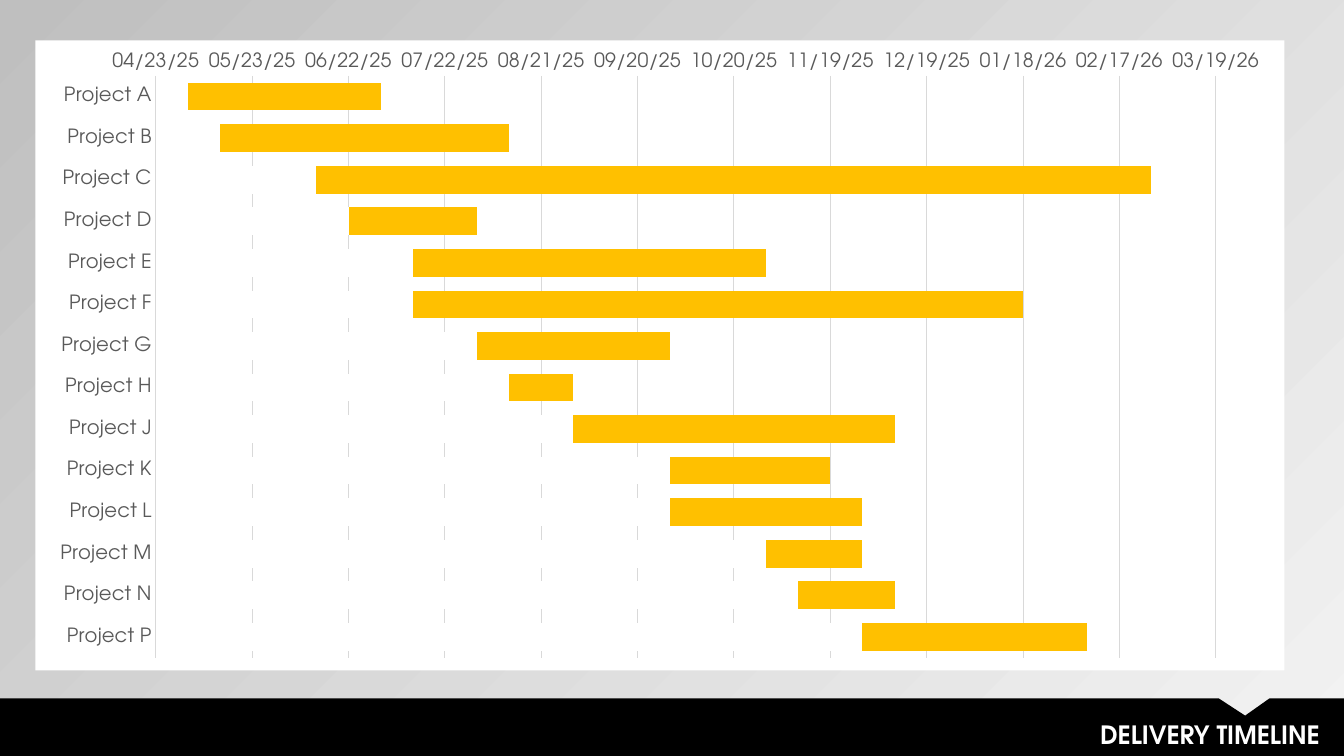
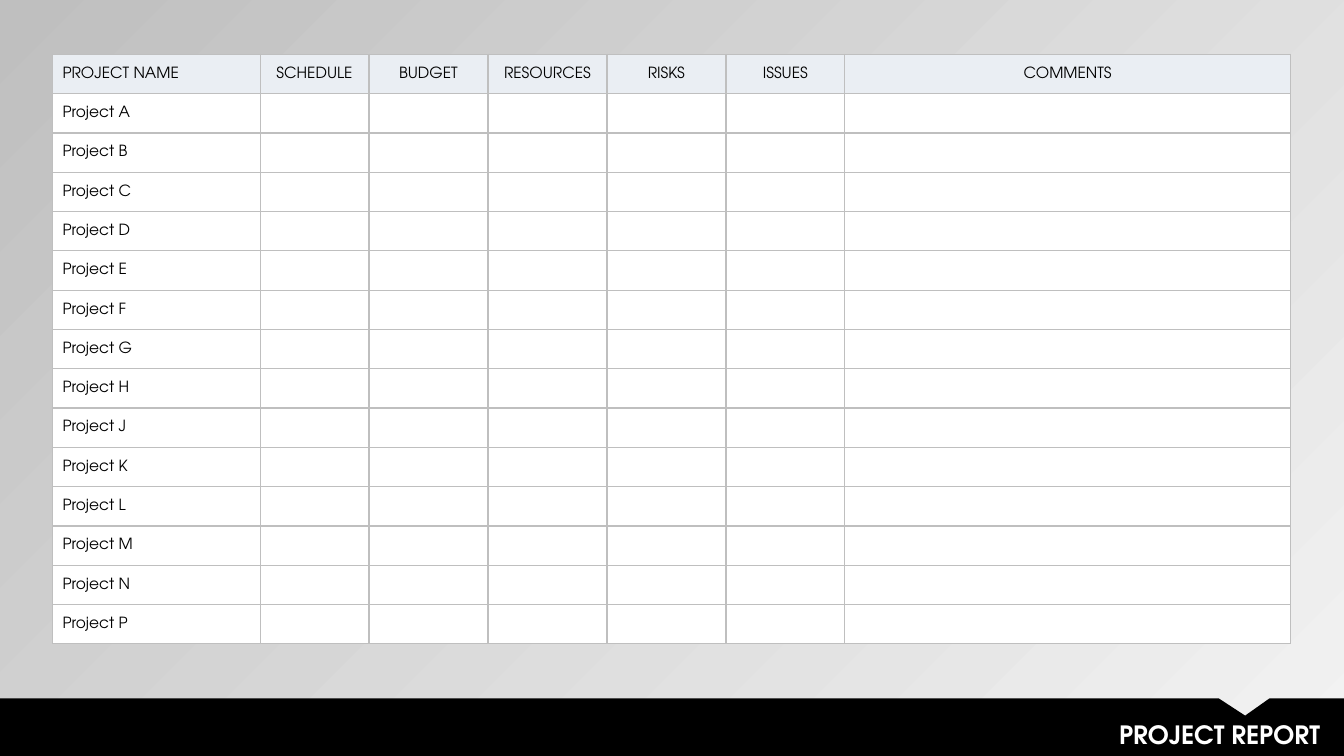
import pptx
import pptx.chart.data
import pptx.dml.color
import pptx.enum.chart
import pptx.enum.text
import pptx.oxml
import pptx.oxml.ns
import pptx.util

Inches = pptx.util.Inches
Pt = pptx.util.Pt
RGBColor = pptx.dml.color.RGBColor
PP_ALIGN = pptx.enum.text.PP_ALIGN
qn = pptx.oxml.ns.qn

# Shared style
FONT = "TeX Gyre Adventor"
BLACK = RGBColor(0x00, 0x00, 0x00)
WHITE = RGBColor(0xFF, 0xFF, 0xFF)
BG_LIGHT = RGBColor(0xF2, 0xF2, 0xF2)
BG_DARK = RGBColor(0xBF, 0xBF, 0xBF)
AMBER = RGBColor(0xFF, 0xC0, 0x00)
AXIS_TEXT = RGBColor(0x59, 0x59, 0x59)
GRID = RGBColor(0xD9, 0xD9, 0xD9)
HEADER = RGBColor(0xEA, 0xEE, 0xF3)
BORDER = RGBColor(0xBF, 0xBF, 0xBF)

BAND = [(0, 6.93), (12.09, 6.93), (12.35, 7.1), (12.59, 6.93),
        (13.33, 6.93), (13.33, 7.5), (0, 7.5)]

# Start and end of each project, as day serials
PROJECTS = {
    "Project A": (45780, 45840),
    "Project B": (45790, 45880),
    "Project C": (45820, 46080),
    "Project D": (45830, 45870),
    "Project E": (45850, 45960),
    "Project F": (45850, 46040),
    "Project G": (45870, 45930),
    "Project H": (45880, 45900),
    "Project J": (45900, 46000),
    "Project K": (45930, 45980),
    "Project L": (45930, 45990),
    "Project M": (45960, 45990),
    "Project N": (45970, 46000),
    "Project P": (45990, 46060),
}

# Report columns and their widths
COLUMNS = {"PROJECT NAME": 2.06, "SCHEDULE": 1.08, "BUDGET": 1.18,
           "RESOURCES": 1.18, "RISKS": 1.18, "ISSUES": 1.18, "COMMENTS": 4.42}
ROW_HEIGHT = 0.39


def xml(tag, body):
    """Element with the chart and drawing namespaces declared."""
    return pptx.oxml.parse_xml(
        f"<{tag} {pptx.oxml.ns.nsdecls('a', 'c')}>{body}</{tag}>")


class Deck:
    def __init__(self):
        self.prs = pptx.Presentation()
        self.prs.slide_width = Inches(13.33)
        self.prs.slide_height = Inches(7.5)
        self.s = None

    def style(self, font, size, color, bold=False):
        font.name = FONT
        font.size = Pt(size)
        font.color.rgb = color
        font.bold = bold

    def slide(self, title):
        self.s = self.prs.slides.add_slide(self.prs.slide_layouts[6])
        fill = self.s.background.fill
        fill.gradient()
        fill.gradient_angle = 135
        for stop, color in zip(fill.gradient_stops, (BG_LIGHT, BG_DARK)):
            stop.color.rgb = color
        self.band()
        self.title(title)

    def band(self):
        points = [(Inches(x), Inches(y)) for x, y in BAND]
        builder = self.s.shapes.build_freeform(*points[0])
        builder.add_line_segments(points[1:], close=True)
        sp = builder.convert_to_shape()
        sp.shadow.inherit = False
        sp.fill.solid()
        sp.fill.fore_color.rgb = BLACK
        sp.line.fill.background()

    def title(self, text):
        tf = self.s.shapes.add_textbox(
            Inches(4.13), Inches(7.09), Inches(9.06), Inches(0.4)).text_frame
        tf.word_wrap = True
        p = tf.paragraphs[0]
        p.text = text
        p.alignment = PP_ALIGN.RIGHT
        self.style(p.font, 18, WHITE, bold=True)

    def timeline(self, projects, first, last, step):
        # White start bars cover the end bars, leaving the duration visible
        starts, ends = zip(*projects.values())
        data = pptx.chart.data.CategoryChartData()
        data.categories = list(projects)
        data.add_series("Series 1", ends)
        data.add_series("Series 2", starts)
        chart = self.s.shapes.add_chart(
            pptx.enum.chart.XL_CHART_TYPE.BAR_CLUSTERED, Inches(0.35),
            Inches(0.4), Inches(12.39), Inches(6.25), data).chart
        chart.has_legend = False
        chart.has_title = False
        self.style(chart.font, 14, BLACK)

        plot = chart.plots[0]
        plot.gap_width = 50
        plot.overlap = 100
        plot.vary_by_categories = False
        for series, color in zip(plot.series, (AMBER, WHITE)):
            series.invert_if_negative = False
            series.format.fill.solid()
            series.format.fill.fore_color.rgb = color

        # Axes
        cat, val = chart.category_axis, chart.value_axis
        for axis in (cat, val):
            axis.major_tick_mark = pptx.enum.chart.XL_TICK_MARK.NONE
            axis.minor_tick_mark = pptx.enum.chart.XL_TICK_MARK.NONE
            self.style(axis.tick_labels.font, 14, AXIS_TEXT)
        cat.reverse_order = True
        val.minimum_scale, val.maximum_scale = first, last
        val.major_unit = step
        val.crosses = pptx.enum.chart.XL_AXIS_CROSSES.MINIMUM
        val.tick_labels.number_format = "mm/dd/yy;@"
        val.tick_labels.number_format_is_linked = False
        val.format.line.fill.background()
        for line in (cat.format.line, val.major_gridlines.format.line):
            line.color.rgb = GRID
            line.width = Pt(0.75)

        # Chart background and plot position
        root = chart._chartSpace
        root.find(qn("c:chart")).addnext(xml(
            "c:spPr", f'<a:solidFill><a:srgbClr val="{WHITE}"/></a:solidFill>'
                      "<a:ln><a:noFill/></a:ln>"))
        area = root.find(".//" + qn("c:plotArea"))
        for old in area.findall(qn("c:layout")):
            area.remove(old)
        modes = '<c:layoutTarget val="inner"/><c:xMode val="edge"/><c:yMode val="edge"/>'
        place = {"x": 0.0965, "y": 0.0565, "w": 0.8485, "h": 0.9235}
        sizes = "".join(f'<c:{k} val="{v}"/>' for k, v in place.items())
        area.insert(0, xml("c:layout", f"<c:manualLayout>{modes}{sizes}</c:manualLayout>"))

    def report(self, columns, names):
        rows = [list(columns)] + [[n] + [""] * (len(columns) - 1) for n in names]
        table = self.s.shapes.add_table(
            len(rows), len(columns), Inches(0.52), Inches(0.54),
            Inches(sum(columns.values())), Inches(ROW_HEIGHT * len(rows))).table
        table.horz_banding = False
        table.first_row = False
        for column, width in zip(table.columns, columns.values()):
            column.width = Inches(width)
        for i, row in enumerate(rows):
            table.rows[i].height = Inches(ROW_HEIGHT)
            for j, text in enumerate(row):
                align = PP_ALIGN.CENTER if j else PP_ALIGN.LEFT
                self.cell(table.cell(i, j), text, align, WHITE if i else HEADER)

    def cell(self, cell, text, align, color):
        cell.margin_top = cell.margin_bottom = 0
        cell.vertical_anchor = pptx.enum.text.MSO_ANCHOR.MIDDLE
        p = cell.text_frame.paragraphs[0]
        p.text = text
        p.alignment = align
        self.style(p.font, 11, BLACK)
        # Borders come before the fill
        pr = cell._tc.get_or_add_tcPr()
        for side in ("L", "R", "T", "B"):
            ln = xml(f"a:ln{side}",
                     f'<a:solidFill><a:srgbClr val="{BORDER}"/></a:solidFill>')
            ln.set("w", str(Pt(1)))
            pr.append(ln)
        cell.fill.solid()
        cell.fill.fore_color.rgb = color


def main():
    deck = Deck()

    # Delivery timeline
    deck.slide("DELIVERY TIMELINE")
    deck.timeline(PROJECTS, 45770, 46100, 30)

    # Project report
    deck.slide("PROJECT REPORT")
    deck.report(COLUMNS, PROJECTS)

    deck.prs.save("out.pptx")


if __name__ == "__main__":
    main()
